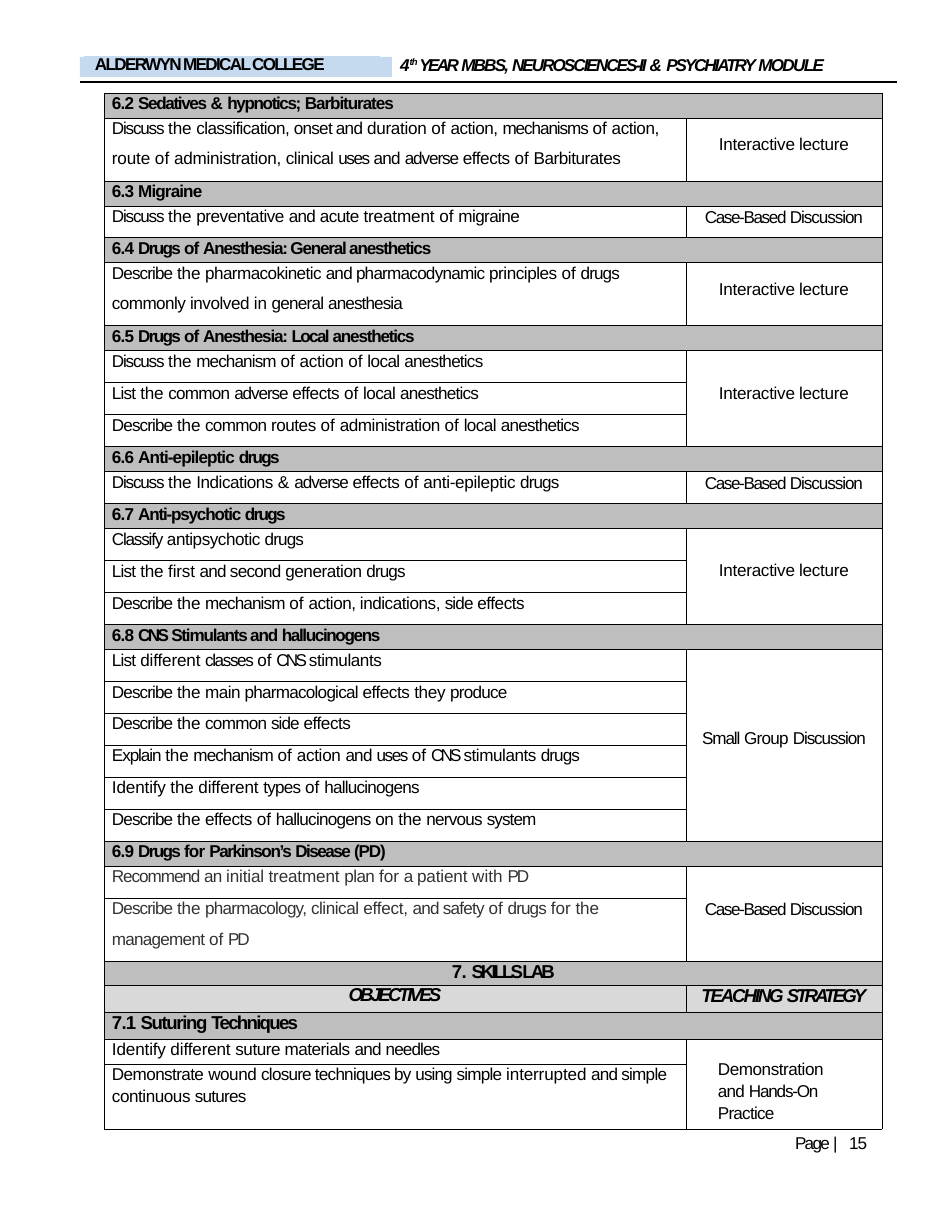
"""Build a curriculum page: pharmacology topics and skills lab with teaching strategies."""
import itertools

import lxml.etree
import pptx
import pptx.dml.color
import pptx.enum.shapes
import pptx.enum.text
import pptx.oxml.ns
import pptx.util

BLACK = pptx.dml.color.RGBColor(0x00, 0x00, 0x00)
CHARCOAL = pptx.dml.color.RGBColor(0x33, 0x33, 0x33)
GREY = pptx.dml.color.RGBColor(0xBE, 0xBE, 0xBE)
LIGHT_GREY = pptx.dml.color.RGBColor(0xD9, 0xD9, 0xD9)
BLUE = pptx.dml.color.RGBColor(0xC5, 0xD9, 0xEF)
LEFT = pptx.enum.text.PP_ALIGN.LEFT
CENTER = pptx.enum.text.PP_ALIGN.CENTER

TOPIC = {"head": 25, "single": 32, "double": 63, "size": 11, "indent": 8, "gap": 6.5}
BANNER = {"head": 24, "single": 27, "double": 27, "size": 12, "indent": 348, "gap": 0}
SKILL = {"head": 27, "single": 25, "double": 65, "size": 12, "indent": 8, "gap": 1}

SECTIONS = [
    (TOPIC, "6.2 Sedatives & hypnotics; Barbiturates", "Interactive lecture", 17, [
        "Discuss the classification, onset and duration of action, mechanisms of action,\n"
        "route of administration, clinical uses and adverse effects of Barbiturates"]),
    (TOPIC, "6.3 Migraine", "Case-Based Discussion", 2, [
        "Discuss the preventative and acute treatment of migraine"]),
    (TOPIC, "6.4 Drugs of Anesthesia: General anesthetics", "Interactive lecture", 17, [
        "Describe the pharmacokinetic and pharmacodynamic principles of drugs\n"
        "commonly involved in general anesthesia"]),
    (TOPIC, "6.5 Drugs of Anesthesia: Local anesthetics", "Interactive lecture", 33, [
        "Discuss the mechanism of action of local anesthetics",
        "List the common adverse effects of local anesthetics",
        "Describe the common routes of administration of local anesthetics"]),
    (TOPIC, "6.6 Anti-epileptic drugs", "Case-Based Discussion", 2, [
        "Discuss the Indications & adverse effects of anti-epileptic drugs"]),
    (TOPIC, "6.7 Anti-psychotic drugs", "Interactive lecture", 33, [
        "Classify antipsychotic drugs",
        "List the first and second generation drugs",
        "Describe the mechanism of action, indications, side effects"]),
    (TOPIC, "6.8 CNS Stimulants and hallucinogens", "Small Group Discussion", 80, [
        "List different classes of CNS stimulants",
        "Describe the main pharmacological effects they produce",
        "Describe the common side effects",
        "Explain the mechanism of action and uses of CNS stimulants drugs",
        "Identify the different types of hallucinogens",
        "Describe the effects of hallucinogens on the nervous system"]),
    (TOPIC, "6.9 Drugs for Parkinson’s Disease (PD)", "Case-Based Discussion", 34, [
        "Recommend an initial treatment plan for a patient with PD",
        "Describe the pharmacology, clinical effect, and safety of drugs for the\n"
        "management of PD"]),
    (BANNER, "7. SKILLS LAB", "TEACHING STRATEGY", 0, ["OBJECTIVES"]),
    (SKILL, "7.1 Suturing Techniques", "Demonstration and Hands-On Practice", 18, [
        "Identify different suture materials and needles",
        "Demonstrate wound closure techniques by using simple interrupted and simple\n"
        "continuous sutures"]),
]

BODY_SPACING = {
    2.2: "|", 0.1: "&", 0: "of with for",
    -0.1: "the route in interrupted first Identify different initial treatment patient",
    -0.2: "duration administration, Interactive lecture effect, anti-epileptic they action",
    -0.4: "classification, acute migraine pharmacokinetic commonly local main plan Demonstrate",
    -0.5: "onset and pharmacodynamic general List common anesthetics second pharmacological "
          "produce types hallucinogens nervous pharmacology, safety management closure "
          "techniques by simple sutures Group Practice",
    -0.6: "Describe drugs mechanism anesthesia side system an needles using 15",
    -0.7: "mechanisms adverse Explain Recommend Small Discussion",
    -0.8: "Discuss Classify a Hands-On", -0.9: "uses classes Case-Based",
    -1.1: "Page", -1.4: "PD", -1.8: "CNS",
}
BOLD_SPACING = {
    -0.2: "&", -0.4: "4 7.", -0.5: "6.2 6.3 6.4 6.5 6.6 6.7 6.8 6.9 7.1 for",
    -0.6: "of Migraine Anti-epileptic th", -0.7: "Barbiturates",
    -0.9: "Sedatives hypnotics; hallucinogens Parkinson’s Suturing", -1: "Disease",
    -1.1: "Drugs drugs Local Techniques MODULE ALDERWYN MEDICAL COLLEGE",
    -1.2: "MBBS,", -1.3: "NEUROSCIENCES-II", -1.4: "PSYCHIATRY TEACHING",
    -1.7: "CNS YEAR", -1.8: "OBJECTIVES", -1.9: "SKILLS LAB STRATEGY",
}


def px(length):
    return round(length * 914400 / 112)


def by_word(groups):
    return {word: value for value, words in groups.items() for word in words.split()}


BODY_WORDS, BOLD_WORDS = by_word(BODY_SPACING), by_word(BOLD_SPACING)


def add_span(para, text, spacing, size, ink, bold, italic):
    span = para.add_run()
    span.text = text
    for name, value in {"name": "Arial", "size": pptx.util.Pt(size),
                        "bold": bold, "italic": italic}.items():
        setattr(span.font, name, value)
    span.font.color.rgb = ink
    properties = span.font._element
    properties.set("spc", str(round(spacing * 100)))
    return properties


def write(frame, text, size=11, ink=BLACK, bold=False, italic=False, align=LEFT,
          line=None, gap=0):
    words, default = (BOLD_WORDS, -0.8) if bold else (BODY_WORDS, -0.3)
    for index, content in enumerate(text.split("\n")):
        para = frame.add_paragraph() if index else frame.paragraphs[0]
        para.alignment = align
        para.space_before = pptx.util.Pt(gap if index else 0)
        if line:
            para.line_spacing = line
        groups = itertools.groupby(content.split(), lambda word: words.get(word, default))
        pieces = [(" ".join(group), spacing) for spacing, group in groups]
        for number, (piece, spacing) in enumerate(pieces, 1):
            ending = " " if number < len(pieces) else ""
            add_span(para, piece + ending, spacing, size, ink, bold, italic)


def set_margins(target, left=0, top=0, right=0):
    for side, value in {"left": left, "top": top, "right": right, "bottom": 0}.items():
        setattr(target, "margin_" + side, px(value))


def place(shape, left, top, width, height):
    for name, value in {"left": left, "top": top, "width": width, "height": height}.items():
        setattr(shape, name, px(value))


def add_borders(cell, visible):
    properties = cell._tc.get_or_add_tcPr()
    for side in "LRTB":
        edge = lxml.etree.SubElement(properties, pptx.oxml.ns.qn("a:ln" + side), w="6350")
        if side in visible:
            fill = lxml.etree.SubElement(edge, pptx.oxml.ns.qn("a:solidFill"))
            lxml.etree.SubElement(fill, pptx.oxml.ns.qn("a:srgbClr"), val=str(BLACK))
        else:
            lxml.etree.SubElement(edge, pptx.oxml.ns.qn("a:noFill"))


def paint(cell, color):
    cell.fill.solid()
    cell.fill.fore_color.rgb = color


def add_header(page):
    rule = page.shapes.add_connector(pptx.enum.shapes.MSO_CONNECTOR.STRAIGHT,
                                     px(80), px(82), px(897), px(82))
    rule.line.color.rgb = BLACK
    rule.line.width = pptx.util.Pt(0.75)
    lxml.etree.SubElement(rule._element.spPr, pptx.oxml.ns.qn("a:effectLst"))
    title = page.shapes.title
    place(title, 399, 53, 516, 22)
    frame = title.text_frame
    set_margins(frame, 1, 1)
    frame.auto_size = pptx.enum.text.MSO_AUTO_SIZE.NONE
    frame.vertical_anchor = pptx.enum.text.MSO_ANCHOR.TOP
    para = frame.paragraphs[0]
    add_span(para, "4", -0.4, 11, BLACK, True, True)
    add_span(para, "th ", -0.6, 10.5, BLACK, True, True).set("baseline", "32000")
    write(frame, "YEAR MBBS, NEUROSCIENCES-II & PSYCHIATRY MODULE", bold=True, italic=True)
    for bounds, name in [((80, 57, 312, 20), ""), ((84, 56, 296, 19), "ALDERWYN MEDICAL COLLEGE")]:
        box = page.shapes.add_shape(pptx.enum.shapes.MSO_SHAPE.RECTANGLE, 0, 0, 0, 0)
        place(box, *bounds)
        box.shadow.inherit = False
        paint(box, BLUE)
        box.line.fill.background()
        set_margins(box.text_frame, 11)
        box.text_frame.vertical_anchor = pptx.enum.text.MSO_ANCHOR.TOP
        if name:
            write(box.text_frame, name, bold=True, line=pptx.util.Pt(11.6))


def add_curriculum(page):
    heights = []
    for style, _, _, _, objectives in SECTIONS:
        heights.append(style["head"])
        heights += [style["double" if "\n" in text else "single"] for text in objectives]
    table = page.shapes.add_table(len(heights), 3, px(75), px(93), px(807), px(sum(heights))).table
    table.first_row = table.horz_banding = False
    for column, width in zip(table.columns, (29, 582, 196)):
        column.width = px(width)
    for row, height in zip(table.rows, heights):
        row.height = px(height)
        for index, cell in enumerate(row.cells):
            set_margins(cell)
            add_borders(cell, "LRTB" if index else "R")
            cell.fill.background()
    table.cell(0, 0).merge(table.cell(len(heights) - 1, 0))
    line = pptx.util.Pt(13)
    row = 0
    for style, heading, strategy, top, objectives in SECTIONS:
        band, last = table.cell(row, 1), row + len(objectives)
        band.merge(table.cell(row, 2))
        paint(band, GREY)
        set_margins(band, style["indent"])
        write(band.text_frame, heading, style["size"], bold=True,
              line=pptx.util.Pt(style["size"] + 2))
        column_head = style is BANNER
        look = {"size": 12, "bold": True, "italic": True, "align": CENTER} if column_head else {}
        ink = CHARCOAL if heading.startswith("6.9") else BLACK
        for offset, text in enumerate(objectives, 1):
            cell = table.cell(row + offset, 1)
            set_margins(cell, 0 if column_head else 8)
            write(cell.text_frame, text, ink=ink, line=line, gap=style["gap"], **look)
        method = table.cell(row + 1, 2)
        if last > row + 1:
            method.merge(table.cell(last, 2))
        if style is SKILL:
            set_margins(method, 32, top, 45)
            write(method.text_frame, strategy, line=1.16)
        else:
            set_margins(method, 0, top)
            write(method.text_frame, strategy, **(look or {"align": CENTER}))
        if column_head:
            for index in (1, 2):
                paint(table.cell(row + 1, index), LIGHT_GREY)
        row = last + 1


def main():
    deck = pptx.Presentation()
    deck.slide_width, deck.slide_height = px(952), px(1232)
    page = deck.slides.add_slide(deck.slide_layouts[5])
    add_header(page)
    add_curriculum(page)
    footer = page.shapes.add_textbox(px(794), px(1135), px(90), px(20))
    footer.text_frame.word_wrap = True
    set_margins(footer.text_frame, 1)
    write(footer.text_frame, "Page | 15", line=pptx.util.Pt(11.5))
    deck.save("out.pptx")


if __name__ == "__main__":
    main()
